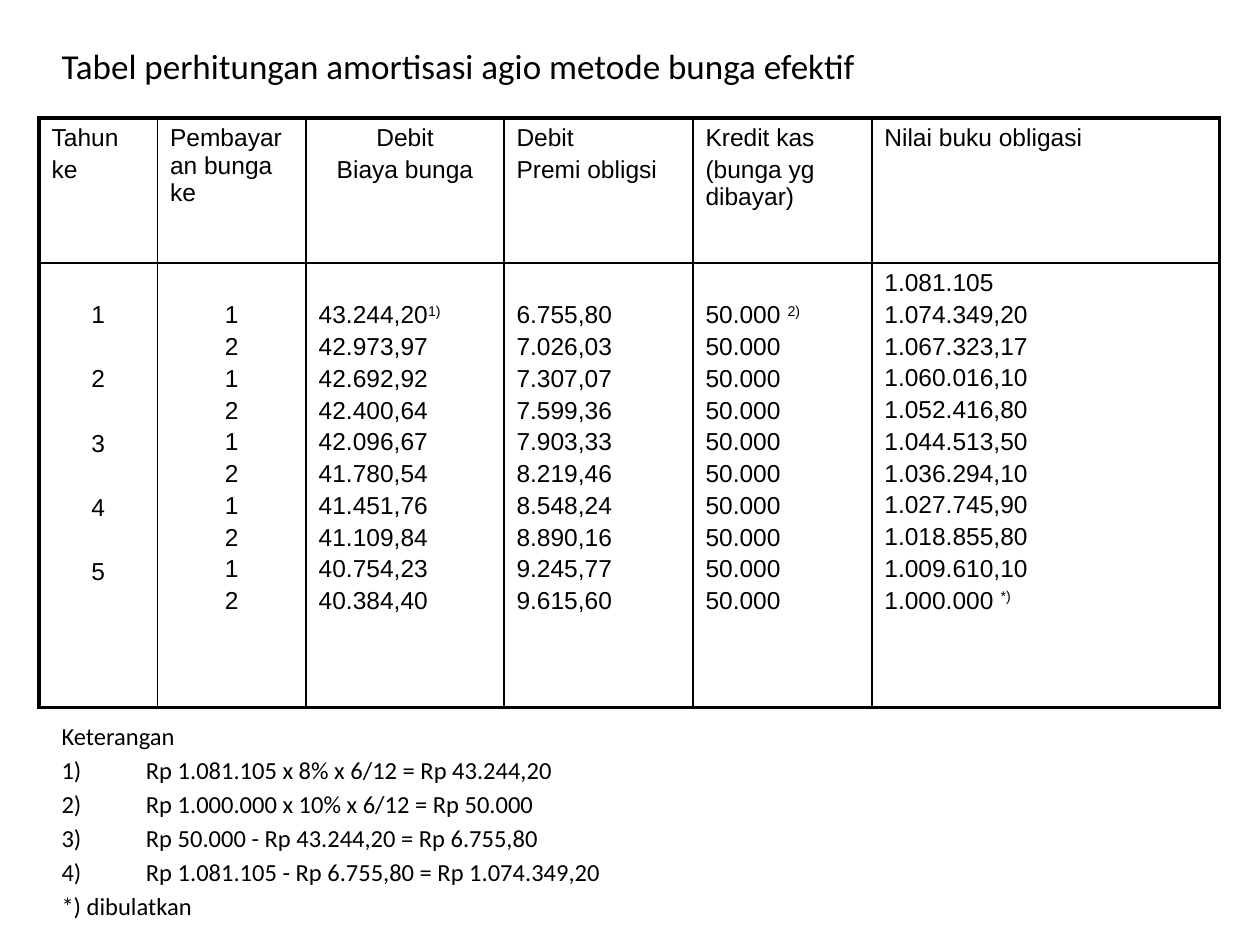
"""Build a slide with a bond premium amortisation table and its notes."""
from lxml.etree import SubElement
from pptx import Presentation
from pptx.dml.color import RGBColor
from pptx.enum.text import PP_ALIGN
from pptx.oxml.ns import qn
from pptx.util import Inches, Pt

BLACK = "000000"
LEFT, CENTER, JUSTIFY = PP_ALIGN.LEFT, PP_ALIGN.CENTER, PP_ALIGN.JUSTIFY


def color(hex_string):
    return RGBColor.from_string(hex_string)


def write(frame, lines, font, size, align, gap):
    """Fill a frame with paragraphs; text after ^ is raised."""
    frame.word_wrap = True
    for index, line in enumerate(lines):
        para = frame.paragraphs[0] if index == 0 else frame.add_paragraph()
        para.alignment = align
        para.space_before = Pt(gap)
        for part, text in enumerate(line.split("^")):
            span = para.add_run()
            span.text = text
            span.font.name = font
            span.font.size = Pt(size)
            span.font.color.rgb = color(BLACK)
            if part:
                span.font._element.set("baseline", "30000")


deck = Presentation()
deck.slide_width, deck.slide_height = Inches(10), Inches(7.5)
page = deck.slides.add_slide(deck.slide_layouts[6])
across, down = deck.slide_width / 100, deck.slide_height / 100

notes = [
    "Keterangan",
    "Rp 1.081.105 x 8% x 6/12 = Rp 43.244,20",
    "Rp 1.000.000 x 10% x 6/12 = Rp 50.000",
    "Rp 50.000 - Rp 43.244,20 = Rp 6.755,80",
    "Rp 1.081.105 - Rp 6.755,80 = Rp 1.074.349,20",
    "*) dibulatkan",
]
texts = [
    (4.1, 77.3, 7.3, 20, 0.38, ["Tabel perhitungan amortisasi agio metode bunga efektif"]),
    (75.6, 93, 23.3, 14, 0.67, notes),
]
for top, width, height, size, indent, lines in texts:
    box = page.shapes.add_textbox(
        int(3.9 * across), int(top * down), int(width * across), int(height * down))
    write(box.text_frame, lines, "Calibri", size, JUSTIFY, 2.6)
    for para in box.text_frame.paragraphs:
        properties = para._p.get_or_add_pPr()
        properties.set("marL", str(Inches(indent)))
        properties.set("indent", str(-Inches(indent)))
        if para.text.startswith("Rp"):
            SubElement(properties, qn("a:buFont"), typeface="+mj-lt")
            SubElement(properties, qn("a:buAutoNum"), type="arabicParenR")

columns = [
    (9.4, ["Tahun", "ke"], LEFT, list("12345"), CENTER),
    (11.8, ["Pembayaran bunga ke"], LEFT, ["1", "2"] * 5, CENTER),
    (15.7, ["Debit", "Biaya bunga"], CENTER,
     ["43.244,20^1)", "42.973,97", "42.692,92", "42.400,64", "42.096,67",
      "41.780,54", "41.451,76", "41.109,84", "40.754,23", "40.384,40"], LEFT),
    (15, ["Debit", "Premi obligsi"], LEFT,
     ["6.755,80", "7.026,03", "7.307,07", "7.599,36", "7.903,33",
      "8.219,46", "8.548,24", "8.890,16", "9.245,77", "9.615,60"], LEFT),
    (14.2, ["Kredit kas", "(bunga yg dibayar)"], LEFT,
     ["50.000 ^2)"] + ["50.000"] * 9, LEFT),
    (27.6, ["Nilai buku obligasi"], LEFT,
     ["1.081.105", "1.074.349,20", "1.067.323,17", "1.060.016,10",
      "1.052.416,80", "1.044.513,50", "1.036.294,10", "1.027.745,90",
      "1.018.855,80", "1.009.610,10", "1.000.000 ^*)"], LEFT),
]
row_shares = [15.33, 47.07]
line_gap, line_pitch = 2.4, 18.5
last = len(columns) - 1

table = page.shapes.add_table(
    2, len(columns), int(3.1 * across), int(12.5 * down),
    int(sum(column[0] for column in columns) * across),
    int(sum(row_shares) * down)).table
table.first_row = table.horz_banding = False
for row, share in zip(table.rows, row_shares):
    row.height = int(share * down)

for number, (share, heading, heading_align, values, align) in enumerate(columns):
    table.columns[number].width = int(share * across)
    header, body = table.cell(0, number), table.cell(1, number)
    write(header.text_frame, heading, "Arial", 14, heading_align, line_gap)
    value_gap = line_gap + line_pitch if number == 0 else line_gap
    write(body.text_frame, values, "Arial", 14, align, value_gap)
    if number < last:
        body.margin_top = Inches(0.05) + Pt(line_pitch)
    for cell in (header, body):
        properties = cell._tc.get_or_add_tcPr()
        outer_edges = {"lnL": number == 0, "lnR": number == last,
                       "lnT": cell is header, "lnB": cell is body}
        for edge, outer in outer_edges.items():
            border = SubElement(properties, qn(f"a:{edge}"), w=str(Pt(2.25 if outer else 1)))
            fill = SubElement(border, qn("a:solidFill"))
            SubElement(fill, qn("a:srgbClr"), val=BLACK)
        cell.fill.background()

deck.save("out.pptx")
